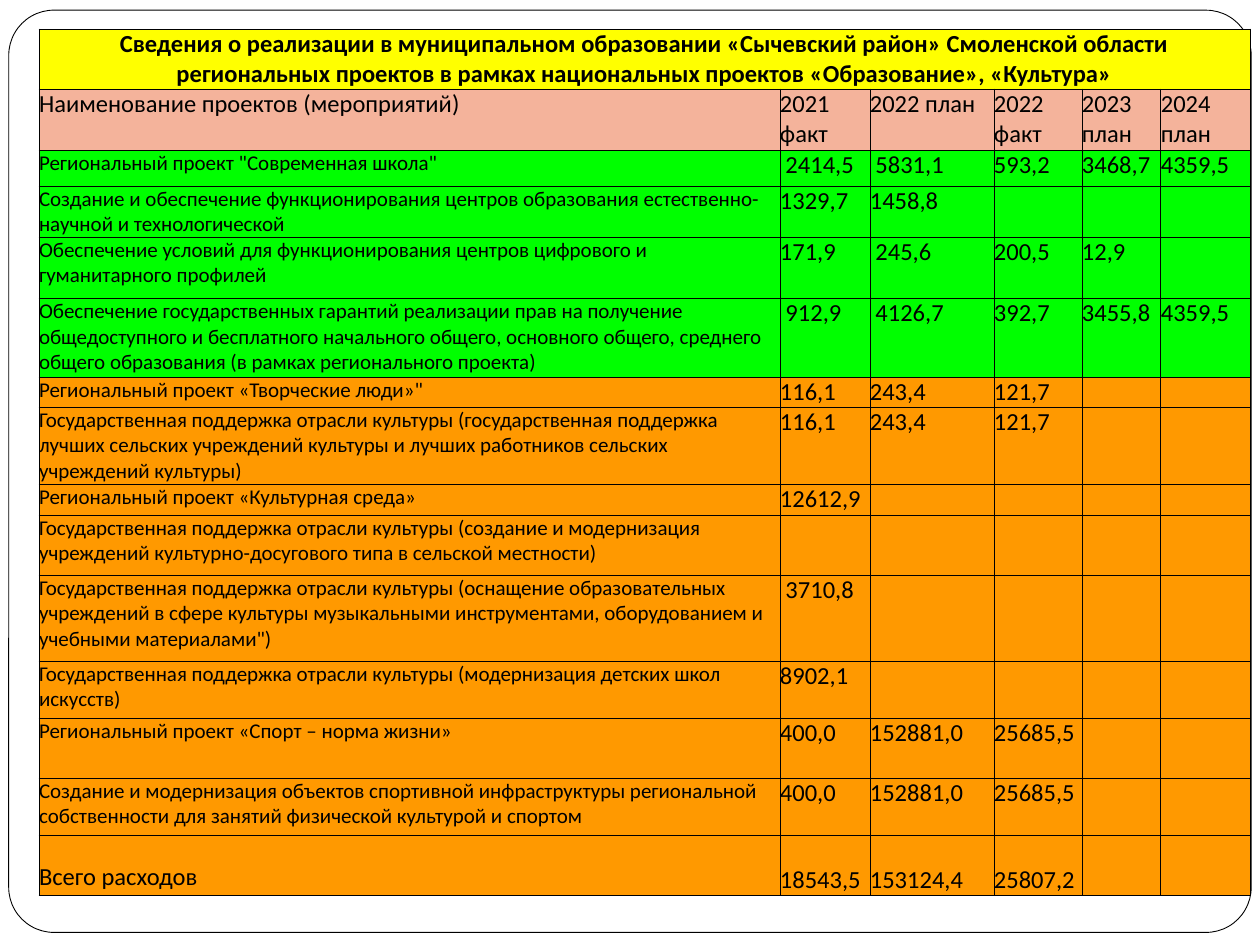
from lxml.etree import SubElement
from pptx import Presentation
from pptx.dml.color import RGBColor
from pptx.enum.shapes import MSO_SHAPE
from pptx.enum.text import MSO_ANCHOR, PP_ALIGN
from pptx.oxml.ns import qn
from pptx.util import Pt


def color(hex_string):
    return RGBColor.from_string(hex_string)


def add_borders(cell, hex_string, width):
    properties = cell._tc.get_or_add_tcPr()
    for side in ("a:lnL", "a:lnR", "a:lnT", "a:lnB"):
        line = SubElement(properties, qn(side), w=str(Pt(width)))
        fill = SubElement(line, qn("a:solidFill"))
        SubElement(fill, qn("a:srgbClr"), val=hex_string)


BLACK, YELLOW, PINK, GREEN, ORANGE = "000000", "FFFF00", "F4B39B", "00FF00", "FF9900"
TITLE = (
    "Сведения о реализации в муниципальном образовании «Сычевский район» Смоленской области\n"
    "региональных проектов в рамках национальных проектов «Образование», «Культура»"
)
COLUMN_WIDTHS = [423.4, 51.4, 70.9, 50.3, 45.1, 50.9]
ROWS = [
    (34.3, YELLOW, [TITLE]),
    (34.9, PINK, ["Наименование проектов (мероприятий)", "2021 факт", "2022 план",
                  "2022 факт", "2023 план", "2024 план"]),
    (20.6, GREEN, ["Региональный проект \"Современная школа\"",
                   " 2414,5", " 5831,1", "593,2", "3468,7", "4359,5"]),
    (29.1, GREEN, ["Создание и обеспечение функционирования центров образования "
                   "естественно-научной и технологической", "1329,7", "1458,8"]),
    (34.9, GREEN, ["Обеспечение условий для функционирования центров цифрового и "
                   "гуманитарного профилей", "171,9", " 245,6", "200,5", "12,9"]),
    (45.1, GREEN, ["Обеспечение государственных гарантий реализации прав на получение "
                   "общедоступного и бесплатного начального общего, основного общего, среднего "
                   "общего образования (в рамках регионального проекта)",
                   " 912,9", " 4126,7", "392,7", "3455,8", "4359,5"]),
    (17.1, ORANGE, ["Региональный проект «Творческие люди»\"", "116,1", "243,4", "121,7"]),
    (44, ORANGE, ["Государственная поддержка отрасли культуры (государственная поддержка "
                  "лучших сельских учреждений культуры и лучших работников сельских "
                  "учреждений культуры)", "116,1", "243,4", "121,7"]),
    (17.7, ORANGE, ["Региональный проект «Культурная среда»", "12612,9"]),
    (34.3, ORANGE, ["Государственная поддержка отрасли культуры (создание и модернизация "
                    "учреждений культурно-досугового типа в сельской местности)"]),
    (49.1, ORANGE, ["Государственная поддержка отрасли культуры (оснащение образовательных "
                    "учреждений в сфере культуры музыкальными инструментами, оборудованием и "
                    "учебными материалами\")", " 3710,8"]),
    (32.6, ORANGE, ["Государственная поддержка отрасли культуры (модернизация детских школ "
                    "искусств)", "8902,1"]),
    (34.3, ORANGE, ["Региональный проект «Спорт – норма жизни»",
                    "400,0", "152881,0", "25685,5"]),
    (32.6, ORANGE, ["Создание и модернизация объектов спортивной инфраструктуры региональной "
                    "собственности для занятий физической культурой и спортом",
                    "400,0", "152881,0", "25685,5"]),
    (34.3, ORANGE, ["Всего расходов", "18543,5", "153124,4", "25807,2"]),
]
TOTAL_ROW = len(ROWS) - 1

presentation = Presentation()
presentation.slide_width, presentation.slide_height = Pt(720), Pt(540)
slide = presentation.slides.add_slide(presentation.slide_layouts[6])

frame = slide.shapes.add_shape(MSO_SHAPE.ROUNDED_RECTANGLE, Pt(5), Pt(5.8), Pt(710), Pt(527))
frame.adjustments[0] = 0.049
frame.shadow.inherit = False
frame.fill.solid()
frame.fill.fore_color.rgb = color("FFFFFF")
frame.line.color.rgb = color(BLACK)
frame.line.width = Pt(0.5)

table = slide.shapes.add_table(
    len(ROWS), len(COLUMN_WIDTHS), Pt(22.3), Pt(16.6),
    Pt(sum(COLUMN_WIDTHS)), Pt(sum(height for height, _, _ in ROWS)),
).table
table.horz_banding = False
table.first_row = False
for column, width in zip(table.columns, COLUMN_WIDTHS):
    column.width = Pt(width)

for row_index, (height, fill_color, texts) in enumerate(ROWS):
    table.rows[row_index].height = Pt(height)
    for column_index in range(len(COLUMN_WIDTHS)):
        cell = table.cell(row_index, column_index)
        cell.margin_left = cell.margin_right = cell.margin_top = cell.margin_bottom = 0
        add_borders(cell, BLACK, 0.5)
        cell.fill.solid()
        cell.fill.fore_color.rgb = color(fill_color)
        if row_index == TOTAL_ROW:
            cell.vertical_anchor = MSO_ANCHOR.BOTTOM
        if column_index >= len(texts):
            SubElement(cell.text_frame.paragraphs[0]._p, qn("a:endParaRPr"), sz="1200")
            continue
        is_project = column_index == 0 and 2 <= row_index < TOTAL_ROW
        cell.text_frame.text = texts[column_index]
        for paragraph in cell.text_frame.paragraphs:
            paragraph.alignment = PP_ALIGN.CENTER if row_index == 0 else PP_ALIGN.LEFT
            for run in paragraph.runs:
                run.font.name = "Calibri"
                run.font.size = Pt(12 if is_project else 14)
                run.font.bold = row_index == 0
                run.font.color.rgb = color(BLACK)

table.cell(0, 0).merge(table.cell(0, len(COLUMN_WIDTHS) - 1))
table.cell(TOTAL_ROW, 0).margin_bottom = Pt(2)

presentation.save("out.pptx")
